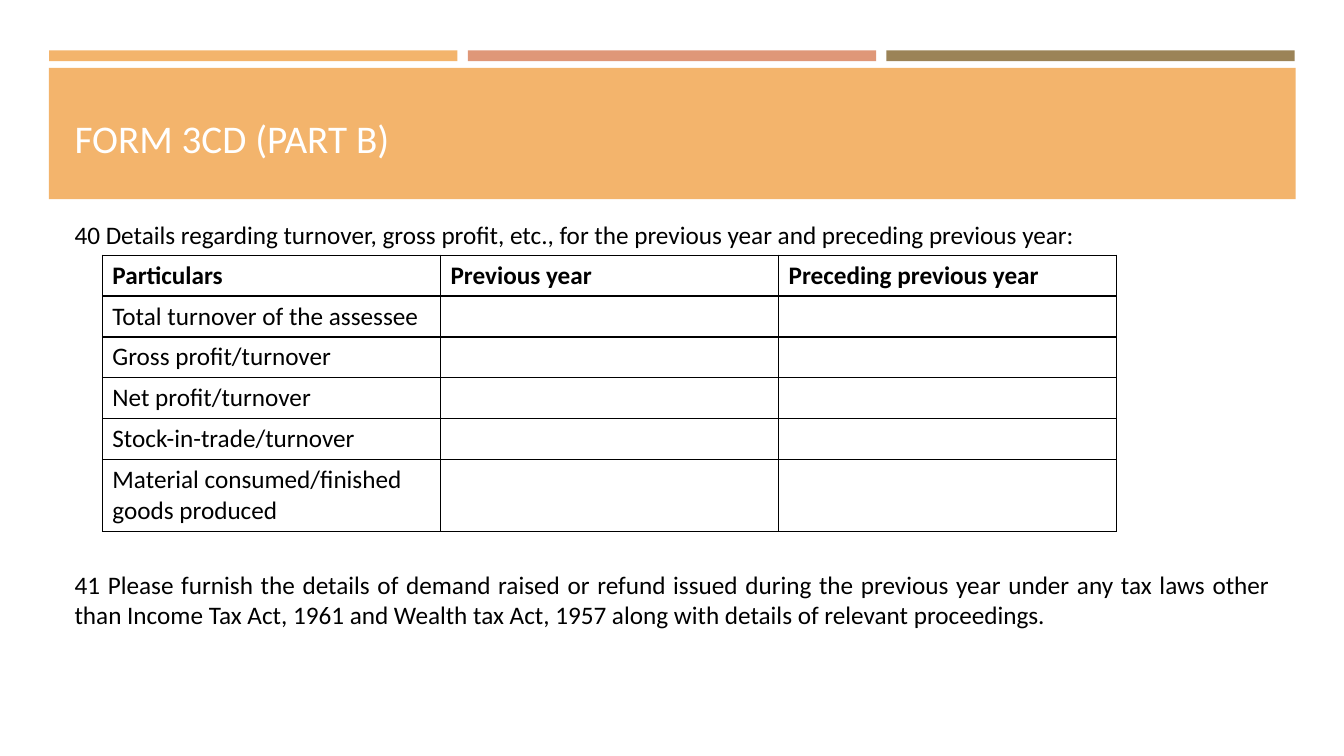
from pptx import Presentation
from pptx.dml.color import RGBColor
from pptx.enum.shapes import MSO_SHAPE
from pptx.enum.text import MSO_ANCHOR, PP_ALIGN
from pptx.oxml.ns import qn
from pptx.util import Cm, Pt
from lxml.etree import SubElement

ORANGE = RGBColor(0xF3, 0xB4, 0x6C)
ROSE = RGBColor(0xDF, 0x97, 0x78)
BROWN = RGBColor(0x9B, 0x83, 0x57)
BLACK = RGBColor(0, 0, 0)
WHITE = RGBColor(0xFF, 0xFF, 0xFF)
FONT = "Calibri"

TITLE = "FORM 3CD (PART B)"
CLAUSES = [
    (5.41, 1.2, "40 Details regarding turnover, gross profit, etc., for the previous year and preceding previous year:"),
    (14.22, 2.2, "41 Please furnish the details of demand raised or refund issued during the previous year under any tax laws other than Income Tax Act, 1961 and Wealth tax Act, 1957 along with details of relevant proceedings."),
]
HEADERS = ["Particulars", "Previous year", "Preceding previous year"]
PARTICULARS = [
    "Total turnover of the assessee",
    "Gross profit/turnover",
    "Net profit/turnover",
    "Stock-in-trade/turnover",
    "Material consumed/finished goods produced",
]

TEXT_LEFT, TEXT_WIDTH = 1.63, 30.63
BAR_LEFT, BAR_WIDTH, BAR_STEP = 1.24, 10.29, 10.55
COL_WIDTH, ROW_HEIGHT, LAST_ROW_HEIGHT = 8.52, 1.03, 1.81


def add_rect(s, left, top, width, height, color):
    sp = s.shapes.add_shape(MSO_SHAPE.RECTANGLE, Cm(left), Cm(top), Cm(width), Cm(height))
    sp.shadow.inherit = False
    sp.fill.solid()
    sp.fill.fore_color.rgb = color
    sp.line.fill.background()


def set_text(tf, text, size, color, bold=False, align=PP_ALIGN.LEFT):
    p = tf.paragraphs[0]
    p.text = text
    p.alignment = align
    p.font.name = FONT
    p.font.size = Pt(size)
    p.font.bold = bold
    p.font.color.rgb = color


def add_text(s, top, height, text, size, color, align, anchor):
    tf = s.shapes.add_textbox(Cm(TEXT_LEFT), Cm(top), Cm(TEXT_WIDTH), Cm(height)).text_frame
    tf.word_wrap = True
    tf.vertical_anchor = anchor
    set_text(tf, text, size, color, align=align)


def set_borders(cell):
    tc_pr = cell._tc.get_or_add_tcPr()
    for side in ("a:lnL", "a:lnR", "a:lnT", "a:lnB"):
        ln = SubElement(tc_pr, qn(side), w=str(Pt(1)))
        fill = SubElement(ln, qn("a:solidFill"))
        SubElement(fill, qn("a:srgbClr"), val=str(BLACK))


def add_turnover_table(s):
    rows = [HEADERS] + [[name, "", ""] for name in PARTICULARS]
    height = ROW_HEIGHT * (len(rows) - 1) + LAST_ROW_HEIGHT
    table = s.shapes.add_table(len(rows), len(HEADERS), Cm(2.58), Cm(6.43),
                               Cm(COL_WIDTH * len(HEADERS)), Cm(height)).table
    table.horz_banding = False
    for col in table.columns:
        col.width = Cm(COL_WIDTH)
    for i, row in enumerate(rows):
        table.rows[i].height = Cm(LAST_ROW_HEIGHT if i == len(rows) - 1 else ROW_HEIGHT)
        for j, text in enumerate(row):
            cell = table.cell(i, j)
            set_borders(cell)
            cell.fill.background()
            set_text(cell.text_frame, text, 18, BLACK, bold=i == 0)


def main():
    prs = Presentation()
    prs.slide_width, prs.slide_height = Cm(33.87), Cm(19.05)
    s = prs.slides.add_slide(prs.slide_layouts[6])
    for i, color in enumerate((ORANGE, ROSE, BROWN)):
        add_rect(s, BAR_LEFT + i * BAR_STEP, 1.27, BAR_WIDTH, 0.27, color)
    add_rect(s, 1.23, 1.71, 31.42, 3.31, ORANGE)
    add_text(s, 1.96, 2.24, TITLE, 28, WHITE, PP_ALIGN.LEFT, MSO_ANCHOR.BOTTOM)
    for top, height, text in CLAUSES:
        add_text(s, top, height, text, 18, BLACK, PP_ALIGN.JUSTIFY, MSO_ANCHOR.TOP)
    add_turnover_table(s)
    prs.save("out.pptx")


if __name__ == "__main__":
    main()
